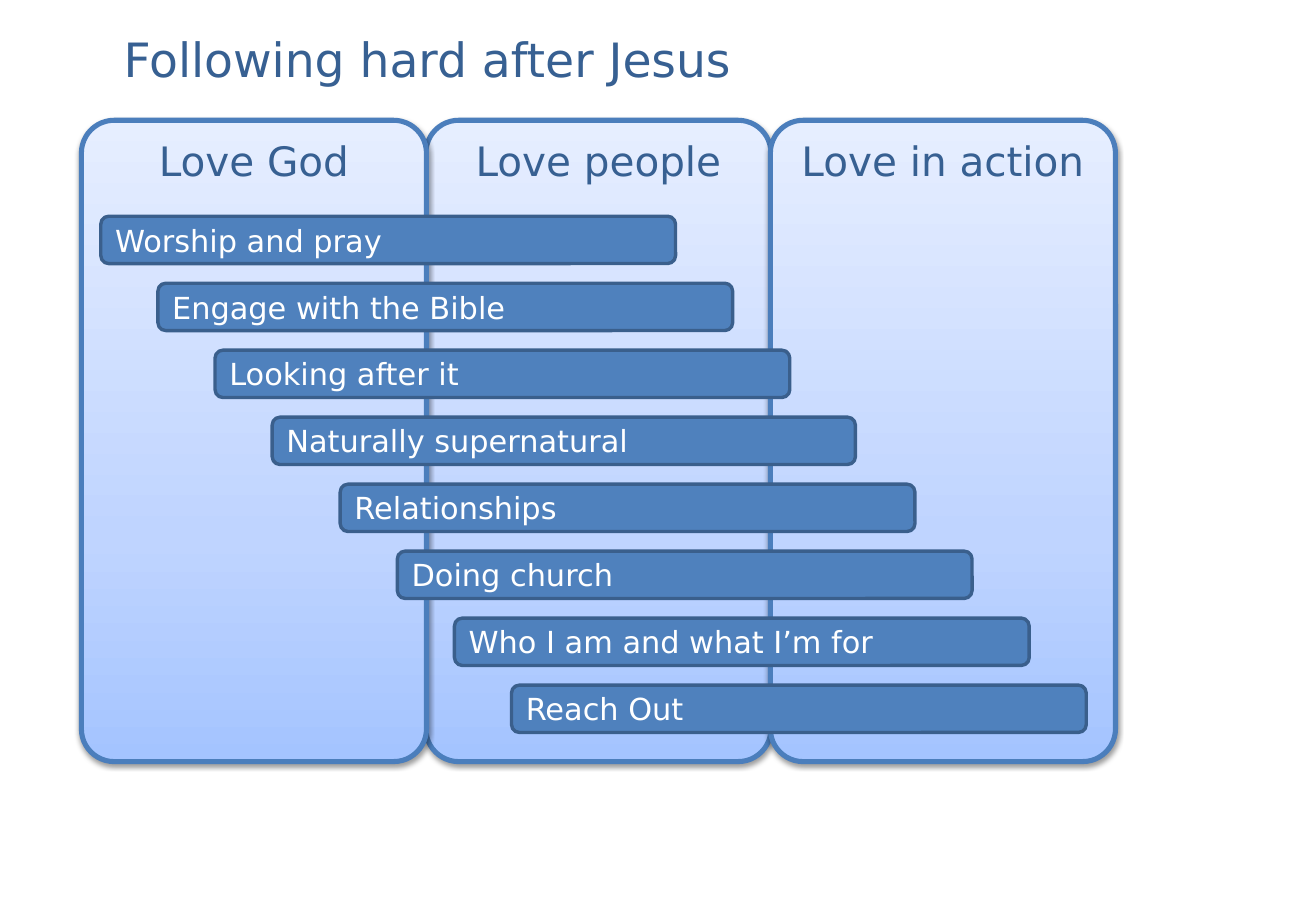
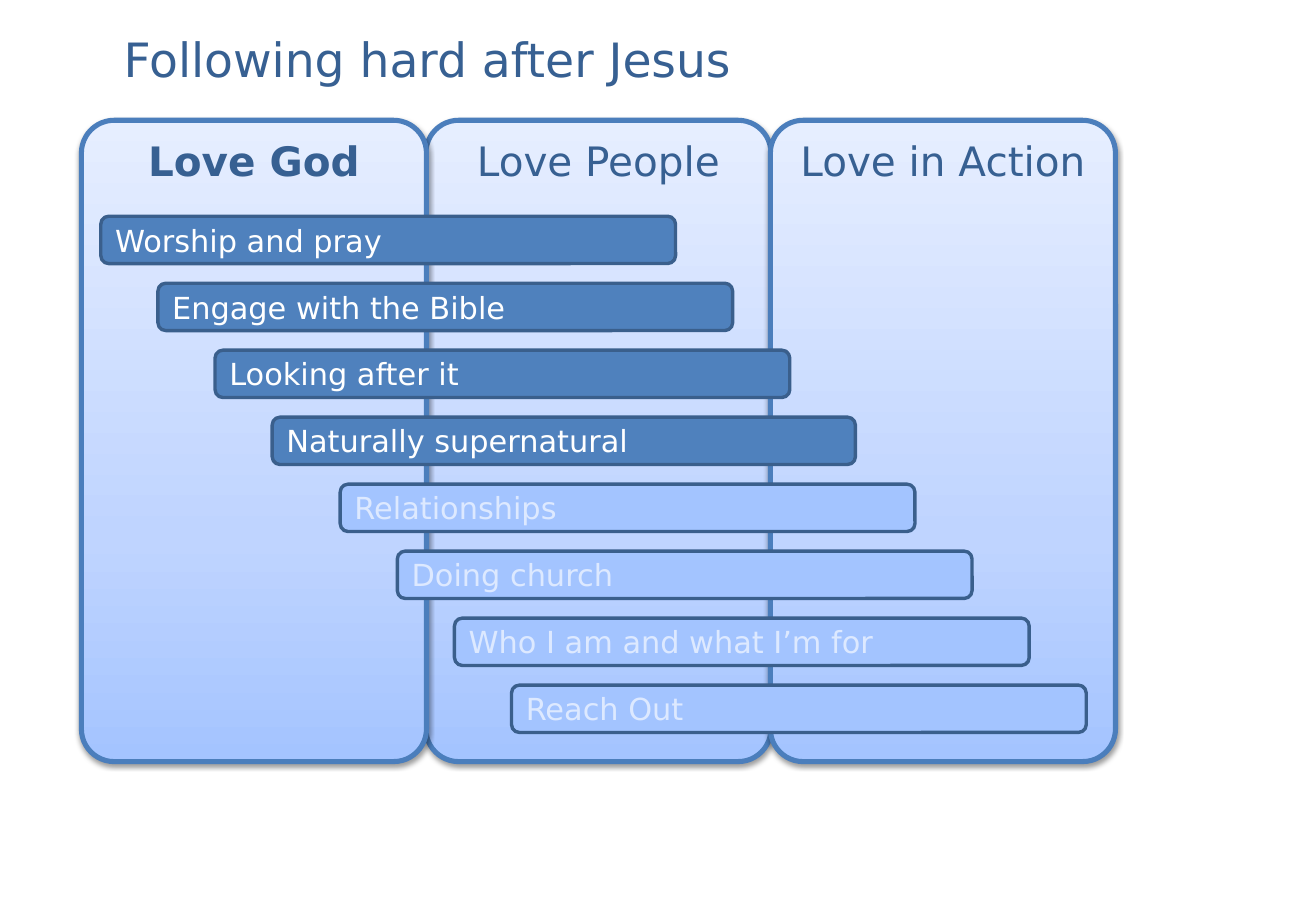
from lxml import etree
from copy import deepcopy
from pptx import Presentation
from pptx.dml.color import RGBColor
from pptx.enum import shapes, text
from pptx.oxml.ns import qn
from pptx.util import Inches, Pt

TITLE = "Following hard after Jesus"
TOPICS = ["Worship and pray", "Engage with the Bible", "Looking after it",
          "Naturally supernatural", "Relationships", "Doing church",
          "Who I am and what I’m for", "Reach Out"]
SLIDES = [
    {"headings": ["Love God", "Love people", "Love in action"],
     "bold": None, "active": 8},
    {"headings": ["Love God", "Love People", "Love in Action"],
     "bold": 0, "active": 4},
]

FONT = "DejaVu Sans"
NAVY = RGBColor(0x37, 0x60, 0x92)
WHITE = RGBColor(0xFF, 0xFF, 0xFF)
PALE = RGBColor(0xDD, 0xE9, 0xFF)
BAR = RGBColor(0x4F, 0x81, 0xBD)
BAR_DIM = RGBColor(0xA3, 0xC4, 0xFF)
BAR_LINE = RGBColor(0x3A, 0x5F, 0x8C)
PANEL_LINE = RGBColor(0x4B, 0x7E, 0xBC)
PANEL_STOPS = [(0, RGBColor(0xA4, 0xC4, 0xFF)),
               (0.35, RGBColor(0xBF, 0xD4, 0xFF)),
               (1, RGBColor(0xE6, 0xEE, 0xFF))]

PANEL_LEFT, PANEL_TOP, PANEL_W, PANEL_H = 0.67, 0.99, 2.84, 5.28
PANEL_PITCH = 2.835
PANEL_ORDER = (1, 2, 0)
BAR_LEFT, BAR_STEP, BAR_W, BAR_H = 0.83, 0.47, 4.73, 0.39
BAR_TOP, BAR_LAST_TOP = 1.78, 5.64
HALF, HALF_SHIFT = 4, 0.09
WIDE_BAR, WIDE_W = 3, 4.8


def put_text(sp, words, size, color, bold=False, align=text.PP_ALIGN.LEFT,
             anchor=text.MSO_ANCHOR.MIDDLE, spacing=None):
    tf = sp.text_frame
    tf.word_wrap = True
    tf.vertical_anchor = anchor
    p = tf.paragraphs[0]
    p.alignment = align
    p.line_spacing = spacing
    r = p.add_run()
    r.text = words
    r.font.name, r.font.size, r.font.bold = FONT, Pt(size), bold
    r.font.color.rgb = color


def add_round_rect(s, left, top, width, height, line, line_width):
    sp = s.shapes.add_shape(shapes.MSO_SHAPE.ROUNDED_RECTANGLE,
                            *map(Inches, (left, top, width, height)))
    sp.line.color.rgb = line
    sp.line.width = Pt(line_width)
    sp.shadow.inherit = False
    return sp


def fill_gradient(sp):
    sp.fill.gradient()
    sp.fill.gradient_angle = 90
    stops = sp._element.spPr.find(".//" + qn("a:gsLst"))
    stops.insert(1, deepcopy(stops[0]))
    for stop, (position, color) in zip(sp.fill.gradient_stops, PANEL_STOPS):
        stop.position = position
        stop.color.rgb = color


def add_shadow(sp):
    effects = sp._element.spPr.find(qn("a:effectLst"))
    shadow = etree.SubElement(effects, qn("a:outerShdw"), blurRad=str(Pt(3.1)),
                              dist=str(Pt(1.6)), dir="5400000", rotWithShape="0")
    color = etree.SubElement(shadow, qn("a:srgbClr"), val="000000")
    etree.SubElement(color, qn("a:alpha"), val="38000")


def add_panel(s, i, heading, bold):
    sp = add_round_rect(s, PANEL_LEFT + i * PANEL_PITCH, PANEL_TOP,
                        PANEL_W, PANEL_H, PANEL_LINE, 3)
    sp.adjustments[0] = 0.095
    fill_gradient(sp)
    add_shadow(sp)
    put_text(sp, heading, 24, NAVY, bold=bold, align=text.PP_ALIGN.CENTER,
             anchor=text.MSO_ANCHOR.TOP)


def add_bar(s, i, topic, active):
    left = BAR_LEFT + i * BAR_STEP + (HALF_SHIFT if i >= HALF else 0)
    top = BAR_TOP + i * (BAR_LAST_TOP - BAR_TOP) / (len(TOPICS) - 1)
    width = WIDE_W if i == WIDE_BAR else BAR_W
    sp = add_round_rect(s, left, top, width, BAR_H, BAR_LINE, 2)
    sp.fill.solid()
    sp.fill.fore_color.rgb = BAR if active else BAR_DIM
    put_text(sp, topic, 18, WHITE if active else PALE)


def add_slide(prs, content):
    s = prs.slides.add_slide(prs.slide_layouts[6])
    title = s.shapes.add_textbox(*map(Inches, (0.92, 0.05, 9, 0.93)))
    put_text(title, TITLE, 28, NAVY, spacing=0.9)
    for i in PANEL_ORDER:
        add_panel(s, i, content["headings"][i], i == content["bold"])
    for i, topic in enumerate(TOPICS):
        add_bar(s, i, topic, i < content["active"])


def main():
    """Build the two overview slides of panels and staggered bars."""
    prs = Presentation()
    prs.slide_width, prs.slide_height = Inches(10.83), Inches(7.5)
    for content in SLIDES:
        add_slide(prs, content)
    prs.save("out.pptx")


if __name__ == "__main__":
    main()
